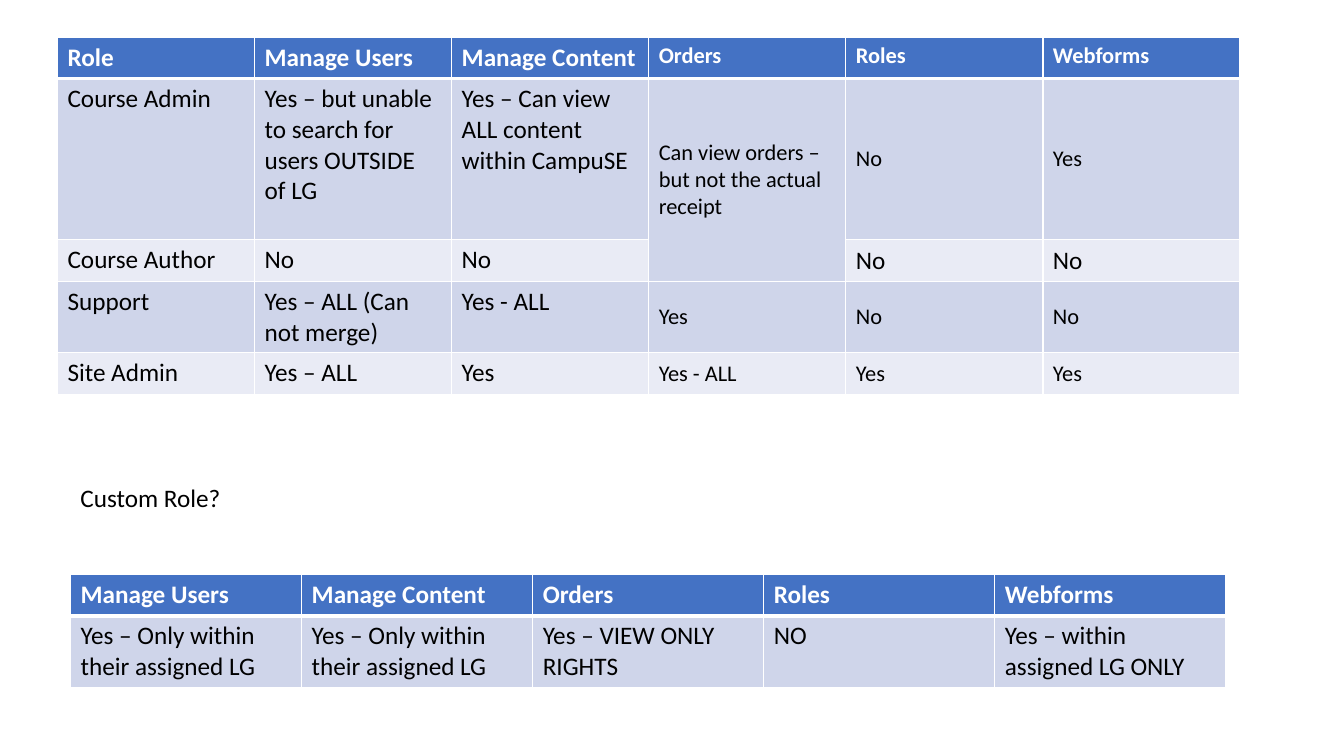
from dataclasses import dataclass

from lxml import etree
from pptx import Presentation
from pptx import util as u
from pptx.dml import color
from pptx.enum import text
from pptx.oxml import ns


@dataclass(frozen=True)
class Theme:
    font: str = "Calibri"
    white: str = "FFFFFF"
    black: str = "000000"
    header: str = "4472C4"
    bands: tuple[str, str] = ("CFD5EA", "E9EBF5")
    body_size: int = 18
    small_size: int = 16
    border: int = 1
    header_rule: int = 3


@dataclass(frozen=True)
class Grid:
    left: float
    top: float
    column_width: float
    row_heights: list[float]
    rows: list[list[str]]
    small_from: int
    full_size_rows: tuple[int, ...] = ()
    merges: tuple[tuple[int, int, int, int], ...] = ()


THEME = Theme()

ROLES = Grid(
    left=0.57, top=0.37, column_width=1.955,
    row_heights=[0.41, 1.6, 0.41, 0.7, 0.41],
    rows=[
        ["Role", "Manage Users", "Manage Content", "Orders", "Roles", "Webforms"],
        ["Course Admin", "Yes – but unable to search for users OUTSIDE of LG",
         "Yes – Can view ALL content within CampuSE",
         "Can view orders – but not the actual receipt", "No", "Yes"],
        ["Course Author", "No", "No", "", "No", "No"],
        ["Support", "Yes – ALL (Can not merge)", "Yes - ALL", "Yes", "No", "No"],
        ["Site Admin", "Yes – ALL", "Yes", "Yes - ALL", "Yes", "Yes"],
    ],
    small_from=3, full_size_rows=(2,), merges=((1, 3, 2, 3),),
)

CUSTOM_ROLE = Grid(
    left=0.7, top=5.7, column_width=2.292,
    row_heights=[0.41, 0.7],
    rows=[
        ["Manage Users", "Manage Content", "Orders", "Roles", "Webforms"],
        ["Yes – Only within their assigned LG", "Yes – Only within their assigned LG",
         "Yes – VIEW ONLY RIGHTS", "NO", "Yes – within assigned LG ONLY"],
    ],
    small_from=5,
)


def add_run(paragraph, words: str, size: int, colour: str, bold: bool = False) -> None:
    run = paragraph.add_run()
    run.text = words
    run.font.name = THEME.font
    run.font.size = u.Pt(size)
    run.font.bold = bold
    run.font.color.rgb = color.RGBColor.from_string(colour)


def set_borders(cell, bottom_width: int) -> None:
    properties = cell._tc.get_or_add_tcPr()
    for side in ("L", "R", "T", "B"):
        width = bottom_width if side == "B" else THEME.border
        line = etree.SubElement(properties, ns.qn(f"a:ln{side}"), w=str(u.Pt(width)))
        fill = etree.SubElement(line, ns.qn("a:solidFill"))
        etree.SubElement(fill, ns.qn("a:srgbClr"), val=THEME.white)


def format_cell(cell, grid: Grid, row: int, column: int) -> None:
    is_header = row == 0
    is_small_column = column >= grid.small_from
    is_small = is_small_column and row not in grid.full_size_rows
    set_borders(cell, THEME.header_rule if is_header else THEME.border)
    cell.fill.solid()
    fill = THEME.header if is_header else THEME.bands[(row - 1) % 2]
    cell.fill.fore_color.rgb = color.RGBColor.from_string(fill)
    if is_small_column and not is_header:
        cell.vertical_anchor = text.MSO_ANCHOR.MIDDLE
    if grid.rows[row][column]:
        add_run(cell.text_frame.paragraphs[0], grid.rows[row][column],
                THEME.small_size if is_small else THEME.body_size,
                THEME.white if is_header else THEME.black, is_header)


def add_grid(slide, grid: Grid) -> None:
    column_count = len(grid.rows[0])
    table = slide.shapes.add_table(
        len(grid.rows), column_count, u.Inches(grid.left), u.Inches(grid.top),
        u.Inches(grid.column_width * column_count), u.Inches(sum(grid.row_heights)),
    ).table
    for column in table.columns:
        column.width = u.Inches(grid.column_width)
    for row, height in zip(table.rows, grid.row_heights):
        row.height = u.Inches(height)
    for row in range(len(grid.rows)):
        for column in range(column_count):
            format_cell(table.cell(row, column), grid, row, column)
    for top, left, bottom, right in grid.merges:
        table.cell(top, left).merge(table.cell(bottom, right))


def add_label(slide, words: str, left: float, top: float, width: float, height: float) -> None:
    frame = slide.shapes.add_textbox(
        u.Inches(left), u.Inches(top), u.Inches(width), u.Inches(height)).text_frame
    frame.word_wrap = True
    frame.auto_size = text.MSO_AUTO_SIZE.SHAPE_TO_FIT_TEXT
    add_run(frame.paragraphs[0], words, THEME.body_size, THEME.black)


def main() -> None:
    presentation = Presentation()
    presentation.slide_width = u.Inches(13.33)
    presentation.slide_height = u.Inches(7.5)
    slide = presentation.slides.add_slide(presentation.slide_layouts[6])
    add_grid(slide, ROLES)
    add_grid(slide, CUSTOM_ROLE)
    add_label(slide, "Custom Role?", 0.7, 4.74, 3.96, 0.4)
    presentation.save("out.pptx")


if __name__ == "__main__":
    main()
